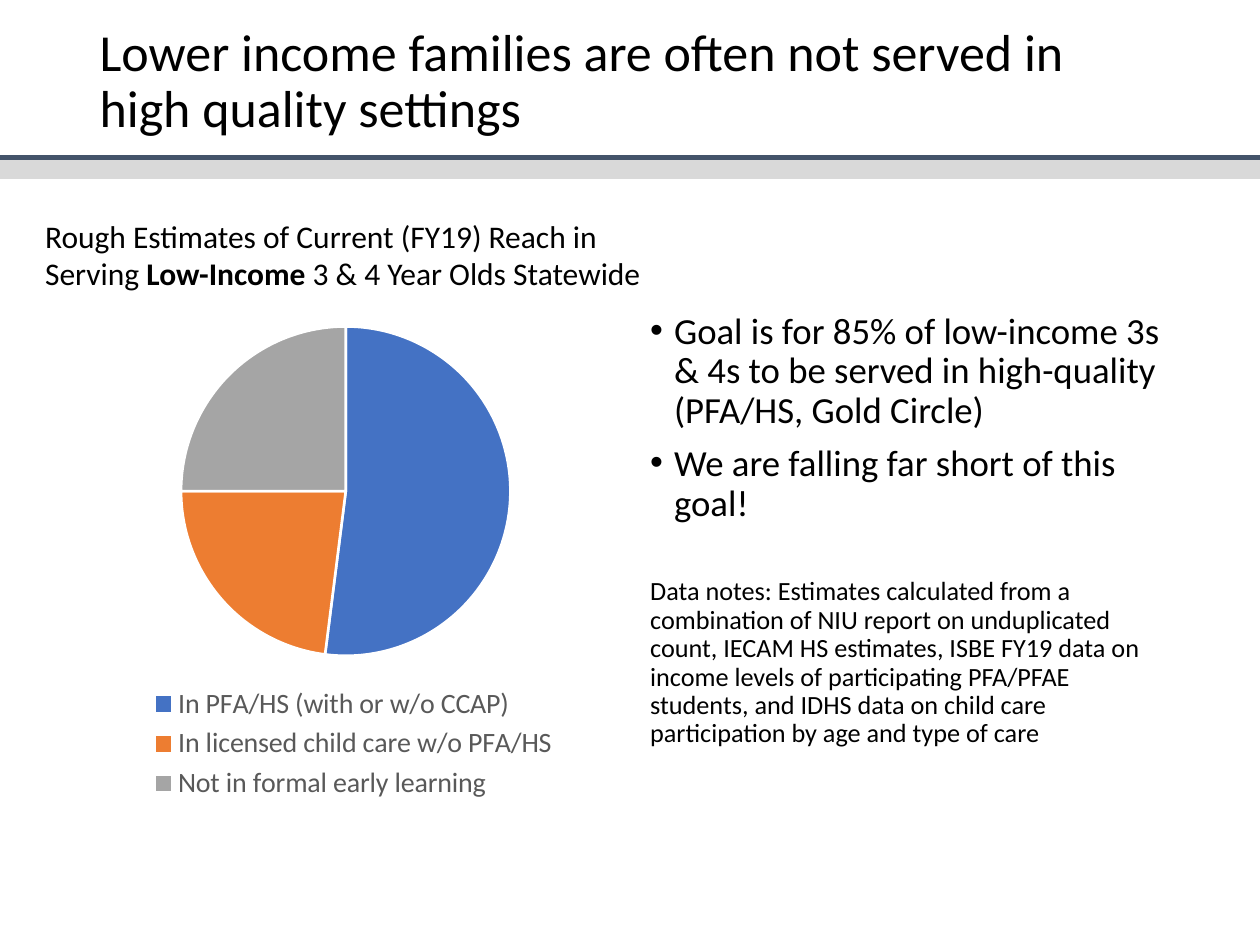
from pptx import Presentation
from pptx.chart.data import CategoryChartData
from pptx.dml.color import RGBColor
from pptx.enum.chart import XL_CHART_TYPE, XL_LEGEND_POSITION
from pptx.enum.shapes import MSO_CONNECTOR
from pptx.enum.text import MSO_ANCHOR, MSO_AUTO_SIZE, PP_ALIGN
from pptx.oxml import parse_xml
from pptx.oxml.ns import nsdecls
from pptx.util import Inches, Pt

FONT = "Calibri"
BLACK = RGBColor(0x00, 0x00, 0x00)
WHITE = RGBColor(0xFF, 0xFF, 0xFF)
SLATE = RGBColor(0x44, 0x54, 0x6A)
SILVER = RGBColor(0xD9, 0xD9, 0xD9)
LABEL = RGBColor(0x59, 0x59, 0x59)
BLUE = RGBColor(0x44, 0x72, 0xC4)
ORANGE = RGBColor(0xED, 0x7D, 0x31)
GREY = RGBColor(0xA5, 0xA5, 0xA5)

GOALS = [
    "Goal is for 85% of low-income 3s & 4s to be served in high-quality (PFA/HS, Gold Circle)",
    "We are falling far short of this goal!",
]
NOTES = (
    "Data notes: Estimates calculated from a combination of NIU report on "
    "unduplicated count, IECAM HS estimates, ISBE FY19 data on income levels of "
    "participating PFA/PFAE students, and IDHS data on child care participation "
    "by age and type of care"
)
SHARES = [
    ("In PFA/HS (with or w/o CCAP)", 52, BLUE),
    ("In licensed child care w/o PFA/HS", 23, ORANGE),
    ("Not in formal early learning", 25, GREY),
]


def place(shape, left, top, width, height):
    shape.left, shape.top = Inches(left), Inches(top)
    shape.width, shape.height = Inches(width), Inches(height)


def style(font, size, color=BLACK, bold=False):
    font.name, font.size, font.bold = FONT, Pt(size), bold
    font.color.rgb = color


def set_frame(shape):
    frame = shape.text_frame
    frame.word_wrap = True
    frame.auto_size = MSO_AUTO_SIZE.NONE
    frame.vertical_anchor = MSO_ANCHOR.TOP
    return frame


def add_rule(slide, y, color, weight):
    rule = slide.shapes.add_connector(
        MSO_CONNECTOR.STRAIGHT, 0, Inches(y), Inches(10), Inches(y))
    rule.line.color.rgb = color
    rule.line.width = Pt(weight)
    rule._element.spPr.append(parse_xml(f"<a:effectLst {nsdecls('a')}/>"))


def set_title(slide, text):
    title = slide.shapes.title
    place(title, 0.69, 0.16, 8.62, 1.45)
    frame = set_frame(title)
    frame.text = text
    para = frame.paragraphs[0]
    para.alignment = PP_ALIGN.LEFT
    para.line_spacing = 0.9
    style(para.runs[0].font, 29.7)


def set_bullet(para, mark):
    props = para._p.get_or_add_pPr()
    indent = Inches(0.19) if mark else 0
    props.set("marL", str(indent))
    props.set("indent", str(-indent))
    tag = f'buChar {nsdecls("a")} char="{mark}"' if mark else f'buNone {nsdecls("a")}'
    props.append(parse_xml(f"<a:{tag}/>"))


def set_body(slide):
    body = slide.placeholders[1]
    place(body, 5.06, 2.43, 4.25, 4.03)
    frame = set_frame(body)
    rows = [(goal, 21, "•", 7.5) for goal in GOALS] + [(NOTES, 15, None, 31)]
    frame.text = "\n".join(row[0] for row in rows)
    for i, (para, row) in enumerate(zip(frame.paragraphs, rows)):
        _, size, mark, gap = row
        para.line_spacing = 0.9
        para.space_before = Pt(gap if i else 0)
        set_bullet(para, mark)
        style(para.runs[0].font, size)


def add_heading(slide, parts):
    box = slide.shapes.add_textbox(0, 0, 0, 0)
    place(box, 0.26, 1.67, 5, 0.71)
    para = set_frame(box).paragraphs[0]
    for text, bold in parts:
        run = para.add_run()
        run.text = text
        style(run.font, 18, bold=bold)


def layout_xml(x, y, w, h, target=""):
    return parse_xml(
        f"<c:layout {nsdecls('c')}><c:manualLayout>{target}"
        '<c:xMode val="edge"/><c:yMode val="edge"/>'
        f'<c:x val="{x}"/><c:y val="{y}"/><c:w val="{w}"/><c:h val="{h}"/>'
        "</c:manualLayout></c:layout>")


def add_pie(slide):
    data = CategoryChartData()
    data.categories = [name for name, _, _ in SHARES]
    data.add_series("Series 1", [share for _, share, _ in SHARES])
    chart = slide.shapes.add_chart(
        XL_CHART_TYPE.PIE, Inches(0.69), Inches(2.43),
        Inches(4.15), Inches(3.97), data).chart
    chart.has_title = False
    style(chart.font, 10)

    # Slices
    plot = chart.plots[0]
    plot.vary_by_categories = True
    for i, (_, _, color) in enumerate(SHARES):
        form = plot.series[0].points[i].format
        form.fill.solid()
        form.fill.fore_color.rgb = color
        form.line.color.rgb = WHITE
        form.line.width = Pt(1.5)

    # Legend
    chart.has_legend = True
    legend = chart.legend
    legend.position = XL_LEGEND_POSITION.BOTTOM
    legend.include_in_layout = False
    style(legend.font, 16, LABEL)

    # Room for the pie above and the stacked legend below
    area = chart._chartSpace.chart.plotArea
    for old in area.xpath("c:layout"):
        area.remove(old)
    area.insert(0, layout_xml(0.18, 0.04, 0.63, 0.66, '<c:layoutTarget val="inner"/>'))
    for old in legend._element.xpath("c:layout"):
        legend._element.remove(old)
    legend._element.xpath("c:legendPos")[0].addnext(layout_xml(0.11, 0.75, 0.8, 0.25))


def main():
    deck = Presentation()
    deck.slide_width, deck.slide_height = Inches(10), Inches(7.5)
    slide = deck.slides.add_slide(deck.slide_layouts[1])

    # Header
    add_rule(slide, 1.33, SILVER, 12.5)
    add_rule(slide, 1.25, SLATE, 3)
    set_title(slide, "Lower income families are often not served in high quality settings")

    # Chart with its heading
    add_pie(slide)
    add_heading(slide, [
        ("Rough Estimates of Current (FY19) Reach in Serving ", False),
        ("Low-Income", True),
        (" 3 & 4 Year Olds Statewide", False),
    ])

    # Goals and data notes
    set_body(slide)
    deck.save("out.pptx")


if __name__ == "__main__":
    main()
